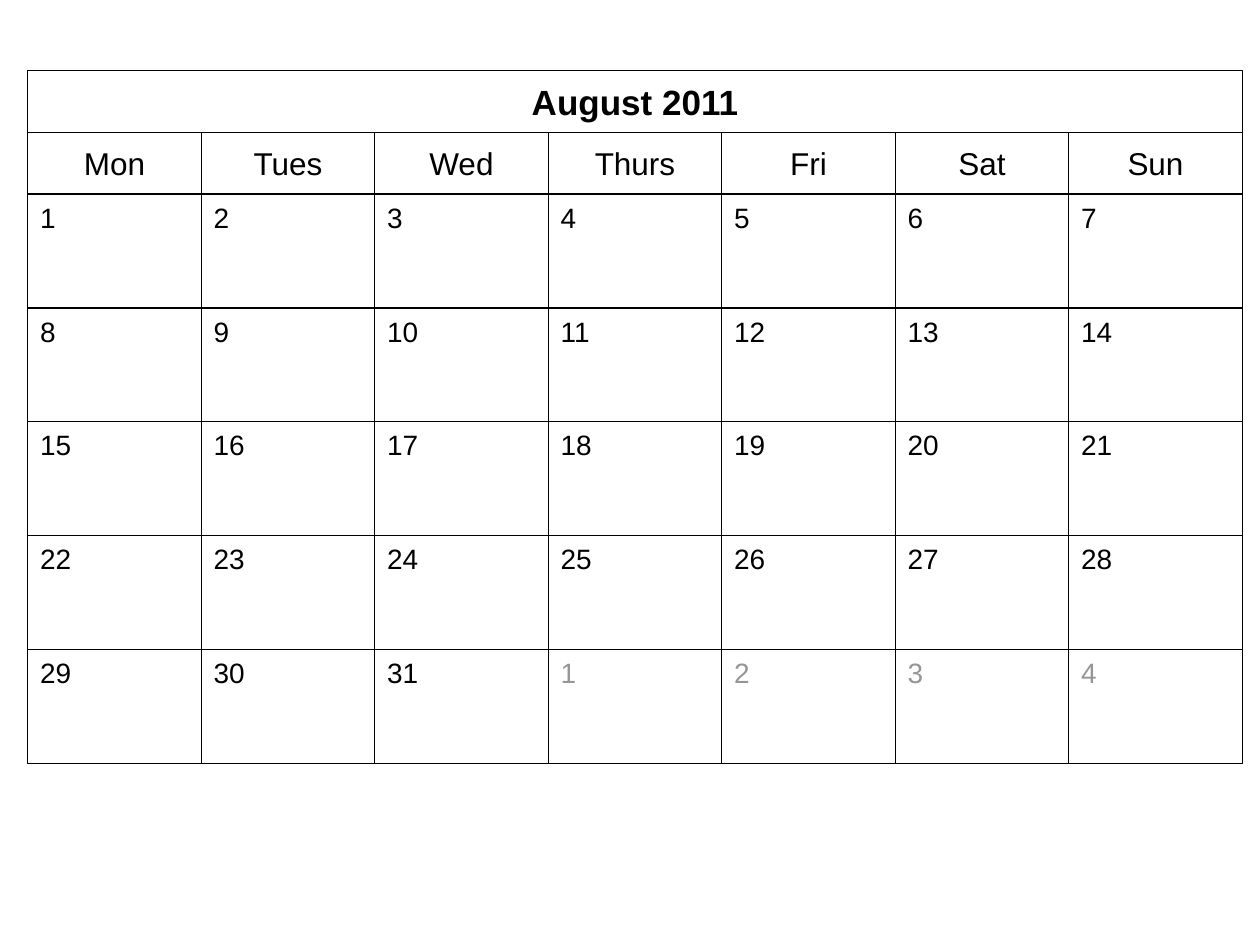
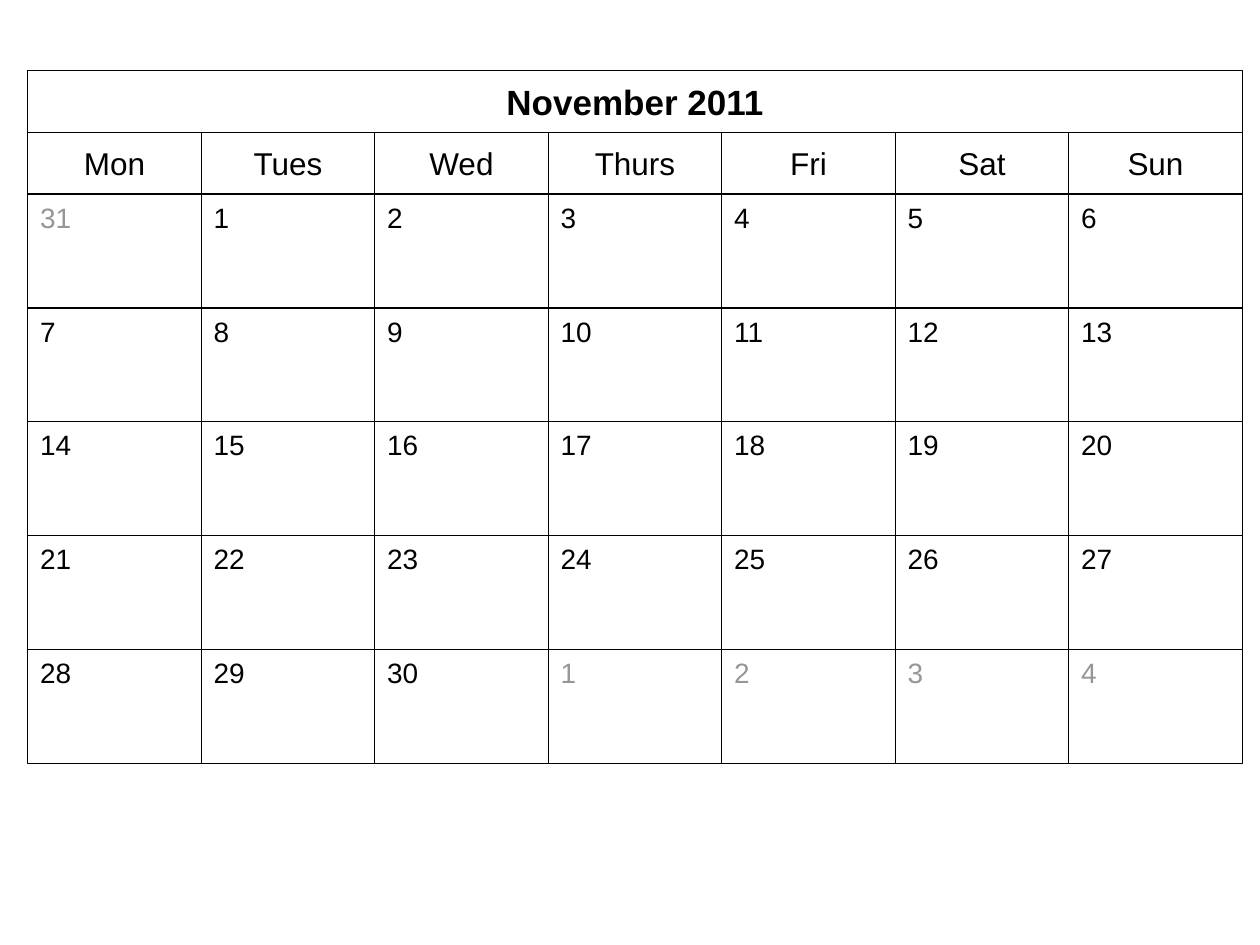
from dataclasses import dataclass

from pptx import Presentation
from pptx.dml.color import RGBColor
from pptx.enum.shapes import MSO_SHAPE as Shape
from pptx.enum.text import MSO_ANCHOR as Anchor, MSO_AUTO_SIZE as AutoSize, PP_ALIGN as Align
from pptx.util import Inches, Pt

# Content: each month starts after some days left over from the month before
WEEKDAYS = ["Mon", "Tues", "Wed", "Thurs", "Fri", "Sat", "Sun"]
WEEKS = 5
MONTHS = [
    {"title": "August 2011", "leading": [], "length": 31},
    {"title": "November 2011", "leading": [31], "length": 30},
]


@dataclass(frozen=True)
class Theme:
    font: str = "Arial"
    ink: RGBColor = RGBColor(0x00, 0x00, 0x00)
    muted: RGBColor = RGBColor(0x96, 0x96, 0x96)
    paper: RGBColor = RGBColor(0xFF, 0xFF, 0xFF)
    border: float = 0.75
    title_size: int = 20
    weekday_size: int = 18
    day_size: int = 16


THEME = Theme()

# Grid, in inches: two heading rows above equal weeks
SLIDE_WIDTH, SLIDE_HEIGHT = 10, 7.5
LEFT, TOP, WIDTH, BOTTOM = 0.22, 0.56, 9.64, 6.06
HEADING_HEIGHT = 0.49
COLUMN_WIDTH = WIDTH / len(WEEKDAYS)
WEEKS_TOP = TOP + 2 * HEADING_HEIGHT
WEEK_HEIGHT = (BOTTOM - WEEKS_TOP) / WEEKS

# Text frame formats
HEADING_FRAME = {
    "vertical_anchor": Anchor.MIDDLE,
    "margin_left": Inches(0.1), "margin_right": Inches(0.1),
    "margin_top": Inches(0.02), "margin_bottom": Inches(0.02),
}
DAY_FRAME = {
    "vertical_anchor": Anchor.TOP,
    "margin_left": Inches(0.1), "margin_right": Inches(0.1),
    "margin_top": Inches(0.05), "margin_bottom": Inches(0.05),
}


def set_attributes(target, values):
    for name, value in values.items():
        setattr(target, name, value)


def format_box(shape, text, size, frame, align, color=THEME.ink, bold=False, filled=True):
    """Give a calendar box its border, fill and text."""
    if filled:
        shape.fill.solid()
        shape.fill.fore_color.rgb = THEME.paper
    else:
        shape.fill.background()
    shape.line.color.rgb = THEME.ink
    shape.line.width = Pt(THEME.border)

    text_frame = shape.text_frame
    text_frame.text = text
    set_attributes(text_frame, {"word_wrap": True, "auto_size": AutoSize.NONE, **frame})
    paragraph = text_frame.paragraphs[0]
    paragraph.alignment = align
    font = paragraph.runs[0].font
    set_attributes(font, {"name": THEME.font, "size": Pt(size), "bold": bold})
    font.color.rgb = color


def add_box(slide, column, top, height):
    shape = slide.shapes.add_shape(
        Shape.RECTANGLE, Inches(LEFT + column * COLUMN_WIDTH), Inches(top),
        Inches(COLUMN_WIDTH), Inches(height))
    shape.shadow.inherit = False
    return shape


def month_days(month):
    """List (day, is in this month) for every box of the grid."""
    days = [(day, False) for day in month["leading"]]
    days += [(day, True) for day in range(1, month["length"] + 1)]
    trailing = WEEKS * len(WEEKDAYS) - len(days)
    return days + [(day, False) for day in range(1, trailing + 1)]


def add_month(presentation, month):
    slide = presentation.slides.add_slide(presentation.slide_layouts[5])

    # Month title
    title = slide.shapes.title
    set_attributes(title, {"left": Inches(LEFT), "top": Inches(TOP),
                           "width": Inches(WIDTH), "height": Inches(HEADING_HEIGHT)})
    format_box(title, month["title"], THEME.title_size, HEADING_FRAME, Align.CENTER, bold=True)

    # Weekday headings
    for column, weekday in enumerate(WEEKDAYS):
        box = add_box(slide, column, TOP + HEADING_HEIGHT, HEADING_HEIGHT)
        format_box(box, weekday, THEME.weekday_size, HEADING_FRAME, Align.CENTER)

    # Days
    for index, (day, in_month) in enumerate(month_days(month)):
        week, column = divmod(index, len(WEEKDAYS))
        box = add_box(slide, column, WEEKS_TOP + week * WEEK_HEIGHT, WEEK_HEIGHT)
        format_box(box, str(day), THEME.day_size, DAY_FRAME, Align.LEFT,
                   color=THEME.ink if in_month else THEME.muted, filled=False)


def main():
    presentation = Presentation()
    presentation.slide_width = Inches(SLIDE_WIDTH)
    presentation.slide_height = Inches(SLIDE_HEIGHT)
    for month in MONTHS:
        add_month(presentation, month)
    presentation.save("out.pptx")


if __name__ == "__main__":
    main()
